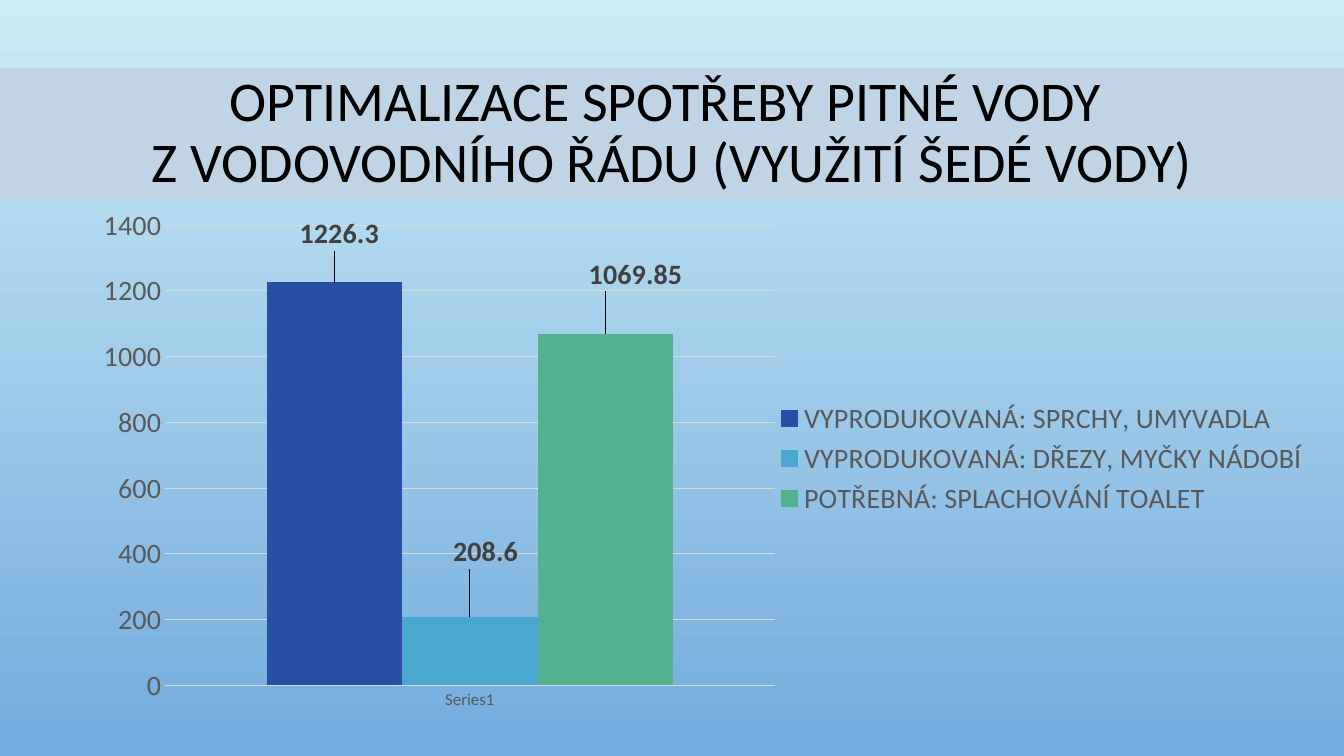
from lxml import etree
from pptx import Presentation
from pptx.chart.data import CategoryChartData
from pptx.dml.color import RGBColor
from pptx.enum.chart import XL_CHART_TYPE, XL_LABEL_POSITION, XL_LEGEND_POSITION, XL_TICK_MARK
from pptx.enum.shapes import MSO_SHAPE
from pptx.enum.text import MSO_ANCHOR, PP_ALIGN
from pptx.oxml.ns import qn
from pptx.util import Inches, Pt

COLORS = {"sky": "CBECF5", "water": "73ABDD", "band": "C1D4E5", "title": "000000",
          "text": "595959", "label": "404040", "grid": "D9D9D9"}
# Name, value in the chart, bar colour, label shift as shares of the chart
SERIES = [
    ("VYPRODUKOVANÁ: SPRCHY, UMYVADLA", 1226.3, "274FA4", (0.004, -0.05)),
    ("VYPRODUKOVANÁ: DŘEZY, MYČKY NÁDOBÍ", 208.6, "48A8D0", (0.013, -0.08)),
    ("POTŘEBNÁ: SPLACHOVÁNÍ TOALET", 1069.85, "53B18F", (0.025, -0.07)),
]


def set_font(font, size, color, bold=False):
    font.name, font.size, font.bold = "Calibri", Pt(size), bold
    font.color.rgb = RGBColor.from_string(color)


def make_layout(**settings):
    layout = etree.Element(qn("c:layout"))
    manual = etree.SubElement(layout, qn("c:manualLayout"))
    for tag, value in settings.items():
        etree.SubElement(manual, qn(f"c:{tag}")).set("val", str(value))
    return layout


presentation = Presentation()
presentation.slide_width, presentation.slide_height = Inches(13.33), Inches(7.5)
slide = presentation.slides.add_slide(presentation.slide_layouts[6])

# Background gradient, light at the top
background = slide.background.fill
background.gradient()
background.gradient_angle = 270
for stop, name in zip(background.gradient_stops, ("sky", "water")):
    stop.color.rgb = RGBColor.from_string(COLORS[name])

# Column chart
data = CategoryChartData()
data.categories = ["Series1"]
for name, value, _, _ in SERIES:
    data.add_series(name, [value])
chart = slide.shapes.add_chart(XL_CHART_TYPE.COLUMN_CLUSTERED, Inches(1), Inches(1.98),
                               Inches(12.04), Inches(5.41), data).chart
set_font(chart.font, 10, COLORS["title"])
chart.has_title = False
plot = chart.plots[0]
plot.gap_width, plot.overlap, plot.vary_by_categories = 150, 0, False

plot_area = plot._element.getparent()
for old_layout in plot_area.findall(qn("c:layout")):
    plot_area.remove(old_layout)
plot_area.insert(0, make_layout(layoutTarget="inner", xMode="edge", yMode="edge",
                                x=0.053, y=0.047, w=0.502, h=0.844))

# Bars and their labels
for series, (_, _, color, (shift_x, shift_y)) in zip(plot.series, SERIES):
    series.format.fill.solid()
    series.format.fill.fore_color.rgb = RGBColor.from_string(color)
    label = series.points[0].data_label
    set_font(label.font, 20, COLORS["label"], bold=True)
    label.position = XL_LABEL_POSITION.OUTSIDE_END
    label_element = series._element.find(".//" + qn("c:dLbl"))
    label_element.insert(1, make_layout(x=shift_x, y=shift_y))

# Axes
for axis, size in ((chart.category_axis, 12), (chart.value_axis, 20)):
    axis.major_tick_mark = axis.minor_tick_mark = XL_TICK_MARK.NONE
    axis.format.line.fill.background()
    set_font(axis.tick_labels.font, size, COLORS["text"])
value_axis = chart.value_axis
value_axis.minimum_scale, value_axis.maximum_scale, value_axis.major_unit = 0, 1400, 200
grid_line = value_axis.major_gridlines.format.line
grid_line.width = Pt(0.75)
grid_line.color.rgb = RGBColor.from_string(COLORS["grid"])

# Legend
chart.has_legend = True
legend = chart.legend
legend.position = XL_LEGEND_POSITION.BOTTOM
legend.include_in_layout = False
set_font(legend.font, 20, COLORS["text"])
for old_layout in legend._element.findall(qn("c:layout")):
    legend._element.remove(old_layout)
legend._element.find(qn("c:legendPos")).addnext(
    make_layout(xMode="edge", yMode="edge", x=0.55, y=0.36, w=0.45, h=0.23))

# Title band
band = slide.shapes.add_shape(MSO_SHAPE.RECTANGLE, 0, Inches(0.68),
                              presentation.slide_width, Inches(1.3))
band.shadow.inherit = False
band.fill.solid()
band.fill.fore_color.rgb = RGBColor.from_string(COLORS["band"])
band.line.fill.background()
band.text_frame.vertical_anchor = MSO_ANCHOR.MIDDLE
paragraph = band.text_frame.paragraphs[0]
paragraph.text = "OPTIMALIZACE SPOTŘEBY PITNÉ VODY \vZ VODOVODNÍHO ŘÁDU (VYUŽITÍ ŠEDÉ VODY)"
paragraph.alignment = PP_ALIGN.CENTER
paragraph.line_spacing = 0.9
set_font(paragraph.font, 40, COLORS["title"])

presentation.save("out.pptx")
